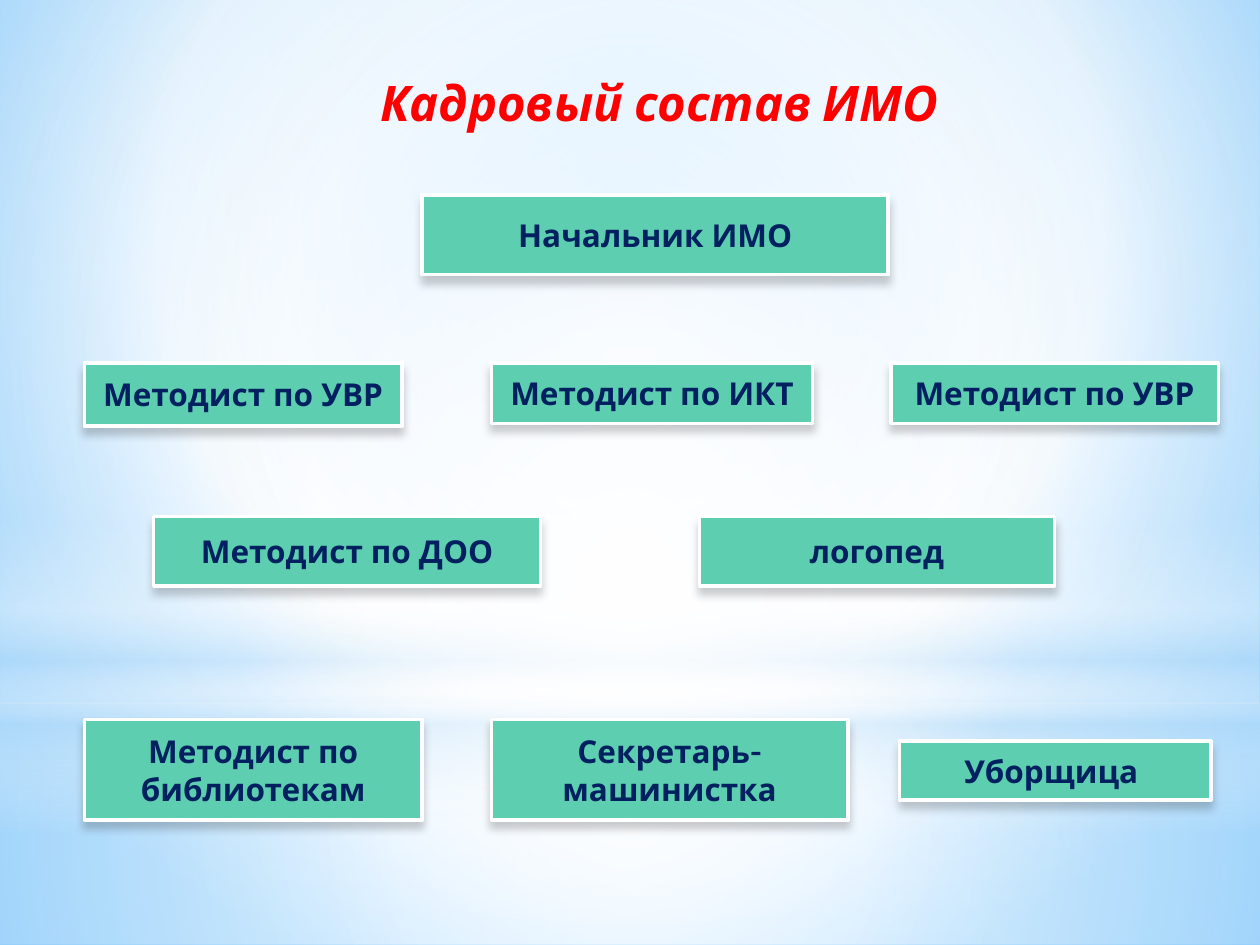
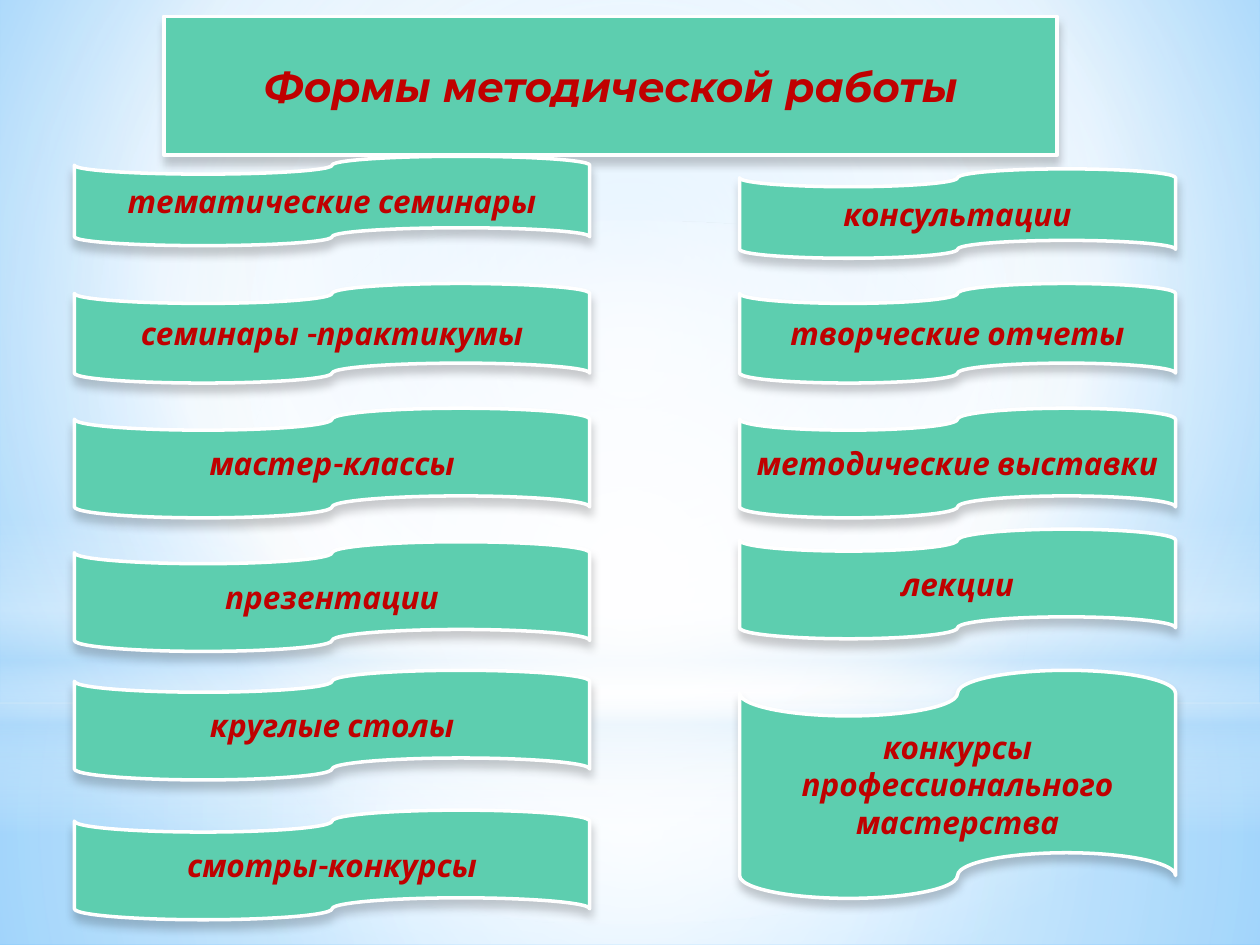
from dataclasses import dataclass, field
from typing import NamedTuple

from lxml import etree
from pptx import Presentation
from pptx import util as u
from pptx.dml.color import RGBColor
from pptx.enum import shapes, text
from pptx.oxml import ns

RECTANGLE = shapes.MSO_SHAPE.RECTANGLE
OVAL = shapes.MSO_SHAPE.OVAL
TAPE = shapes.MSO_SHAPE.FLOWCHART_PUNCHED_TAPE


@dataclass(frozen=True)
class Theme:
    panel: str = "5DCEAF"
    outline: str = "FFFFFF"
    outline_width: float = 2
    shadow: str = "000000"
    haze: str = "B4DCFA"
    glow: str = "FFFFFF"
    sky: str = "9ED5FF"
    sky_edge: str = "5BB9FF"
    heading: dict = field(default_factory=lambda: dict(
        name="Karla", size=u.Pt(28), bold=True, italic=True, color="FF0000"))
    banner: dict = field(default_factory=lambda: dict(
        name="Montserrat", size=u.Pt(24), bold=True, italic=True, color="C00000"))
    post: dict = field(default_factory=lambda: dict(
        name="Karla", size=u.Pt(18), bold=True, italic=False, color="002060"))
    activity: dict = field(default_factory=lambda: dict(
        name="Karla", size=u.Pt(18), bold=True, italic=True, color="C00000"))


THEME = Theme()


class Frame(NamedTuple):
    left: float
    top: float
    width: float
    height: float


class Stop(NamedTuple):
    position: int
    color: str
    opacity: int = 100


class Haze(NamedTuple):
    """A translucent gradient shape; radial unless linear is set."""
    kind: shapes.MSO_SHAPE
    frame: Frame
    stops: list[Stop]
    linear: bool = False


class Panel(NamedTuple):
    caption: str
    frame: Frame


class Activity(NamedTuple):
    caption: str
    top: float
    height: float


CENTRE = (50, 50, 50, 50)
SKY_STOPS = [Stop(0, THEME.sky), Stop(60, THEME.glow), Stop(100, THEME.sky_edge)]
HAZES = [
    Haze(RECTANGLE, Frame(0, 5.58, 10, 1.92),
         [Stop(0, THEME.glow, 91), Stop(37, THEME.glow, 76), Stop(100, THEME.haze, 79)]),
    Haze(RECTANGLE, Frame(0, 0, 10, 5.58),
         [Stop(0, THEME.glow, 89), Stop(48, THEME.glow, 62), Stop(100, THEME.haze, 79)]),
    Haze(RECTANGLE, Frame(0, 4.12, 10, 2.5),
         [Stop(0, THEME.glow, 0), Stop(29, THEME.glow, 30), Stop(45, THEME.haze, 40),
          Stop(55, THEME.glow, 26), Stop(65, THEME.haze, 60), Stop(100, THEME.glow, 0)],
         linear=True),
    Haze(OVAL, Frame(0, 1.75, 10, 5.58),
         [Stop(0, THEME.glow), Stop(56, THEME.glow, 0)]),
]

POSTS = [
    Panel("Начальник ИМО", Frame(3.35, 1.55, 3.7, 0.63)),
    Panel("Методист по УВР", Frame(0.67, 2.88, 2.52, 0.5)),
    Panel("Методист по ИКТ", Frame(3.9, 2.88, 2.55, 0.48)),
    Panel("Методист по УВР", Frame(7.07, 2.88, 2.6, 0.48)),
    Panel("Методист по ДОО", Frame(1.22, 4.1, 3.07, 0.55)),
    Panel("логопед", Frame(5.55, 4.1, 2.82, 0.55)),
    Panel("Методист по библиотекам", Frame(0.67, 5.71, 2.68, 0.8)),
    Panel("Секретарь- машинистка", Frame(3.9, 5.71, 2.83, 0.8)),
    Panel("Уборщица ", Frame(7.14, 5.88, 2.47, 0.47)),
]

# Each column is keyed by its left edge and width.
ACTIVITY_COLUMNS = {
    (0.59, 4.09): [
        Activity("тематические семинары", 1.24, 0.71),
        Activity("семинары -практикумы", 2.25, 0.79),
        Activity("мастер-классы", 3.24, 0.87),
        Activity("презентации", 4.3, 0.87),
        Activity("круглые столы", 5.32, 0.87),
        Activity("смотры-конкурсы", 6.43, 0.87),
    ],
    (5.87, 3.46): [
        Activity("консультации", 1.34, 0.71),
        Activity("творческие отчеты", 2.25, 0.79),
        Activity("методические выставки", 3.24, 0.87),
        Activity("лекции", 4.2, 0.87),
        Activity("конкурсы профессионального мастерства", 5.32, 1.81),
    ],
}


def add_node(parent, tag: str, **attributes):
    values = {name: str(value) for name, value in attributes.items()}
    return etree.SubElement(parent, ns.qn(tag), values)


def add_color(parent, color: str, opacity: int) -> None:
    node = add_node(parent, "a:srgbClr", val=color)
    if opacity < 100:
        add_node(node, "a:alpha", val=opacity * 1000)


def set_gradient(owner, stops: list[Stop], focus=CENTRE, linear=False) -> None:
    """Replace the solid fill directly inside owner with a gradient."""
    solid = owner.find(ns.qn("a:solidFill"))
    gradient = etree.Element(ns.qn("a:gradFill"), rotWithShape="1")
    stop_list = add_node(gradient, "a:gsLst")
    for stop in stops:
        add_color(add_node(stop_list, "a:gs", pos=stop.position * 1000),
                  stop.color, stop.opacity)
    if linear:
        add_node(gradient, "a:lin", ang=90 * 60000, scaled=0)
    else:
        circle = add_node(gradient, "a:path", path="circle")
        add_node(circle, "a:fillToRect",
                 **{side: share * 1000 for side, share in zip("ltrb", focus)})
    owner.replace(solid, gradient)


def to_inches(frame: Frame) -> list[u.Length]:
    return [u.Inches(length) for length in frame]


def move_to(shape, frame: Frame) -> None:
    for name, length in zip(Frame._fields, to_inches(frame)):
        setattr(shape, name, length)


def write_caption(shape, caption: str, style: dict) -> None:
    frame = shape.text_frame
    frame.text = caption
    settings = dict(word_wrap=True, auto_size=text.MSO_AUTO_SIZE.NONE,
                    vertical_anchor=text.MSO_ANCHOR.MIDDLE)
    for name, value in settings.items():
        setattr(frame, name, value)
    para = frame.paragraphs[0]
    para.alignment = text.PP_ALIGN.CENTER
    span = para.runs[0]
    for name, value in style.items():
        if name == "color":
            span.font.color.rgb = RGBColor.from_string(value)
        else:
            setattr(span.font, name, value)


def paint_panel(shape) -> None:
    """Green fill, white outline and a soft shadow below."""
    shape.fill.solid()
    shape.fill.fore_color.rgb = RGBColor.from_string(THEME.panel)
    shape.line.color.rgb = RGBColor.from_string(THEME.outline)
    shape.line.width = u.Pt(THEME.outline_width)
    shape.shadow.inherit = False
    effects = shape.element.spPr.find(ns.qn("a:effectLst"))
    shadow = add_node(effects, "a:outerShdw", blurRad=u.Pt(5), dist=u.Pt(4),
                      dir=90 * 60000, rotWithShape=0)
    add_color(shadow, THEME.shadow, 20)


def add_panel(page, kind: shapes.MSO_SHAPE, panel: Panel, style: dict) -> None:
    box = page.shapes.add_shape(kind, *to_inches(panel.frame))
    paint_panel(box)
    write_caption(box, panel.caption, style)


def add_title(page, panel: Panel, style: dict):
    title = page.shapes.title
    move_to(title, panel.frame)
    write_caption(title, panel.caption, style)
    return title


def shape_as_tape(title) -> None:
    """Turn the title placeholder into a mirrored punched tape."""
    transform = title.element.spPr.find(ns.qn("a:xfrm"))
    transform.set("flipH", "1")
    geometry = etree.Element(ns.qn("a:prstGeom"), prst="flowChartPunchedTape")
    add_node(geometry, "a:avLst")
    transform.addnext(geometry)
    paint_panel(title)


def build_backdrop(layout, page) -> None:
    """Draw the haze on the page, then hand it to the shared layout."""
    layout.background.fill.solid()
    set_gradient(layout.element.find(".//" + ns.qn("p:bgPr")), SKY_STOPS, (20, 10, 20, 60))
    tree = layout.element.cSld.spTree
    for index, haze in enumerate(HAZES):
        shape = page.shapes.add_shape(haze.kind, *to_inches(haze.frame))
        shape.shadow.inherit = False
        shape.line.fill.background()
        shape.fill.solid()
        set_gradient(shape.element.spPr, haze.stops, linear=haze.linear)
        shape.element.nvSpPr.cNvPr.set("id", str(20 + index))
        tree.insert(2 + index, shape.element)


def build_staff(page) -> None:
    add_title(page, Panel("Кадровый состав ИМО", Frame(1.06, 0.52, 8.35, 0.57)),
              THEME.heading)
    for post in POSTS:
        add_panel(page, RECTANGLE, post, THEME.post)


def build_activities(page) -> None:
    title = add_title(page, Panel("Формы методической работы", Frame(1.3, 0.13, 7.09, 1.1)),
                      THEME.banner)
    shape_as_tape(title)
    for (left, width), activities in ACTIVITY_COLUMNS.items():
        for activity in activities:
            frame = Frame(left, activity.top, width, activity.height)
            add_panel(page, TAPE, Panel(activity.caption, frame), THEME.activity)


def main() -> None:
    deck = Presentation()
    deck.slide_width, deck.slide_height = u.Inches(10), u.Inches(7.5)
    layout = deck.slide_layouts.get_by_name("Title Only")
    staff, activities = (deck.slides.add_slide(layout) for _ in range(2))
    build_backdrop(layout, staff)
    build_staff(staff)
    build_activities(activities)
    deck.save("out.pptx")


if __name__ == "__main__":
    main()
